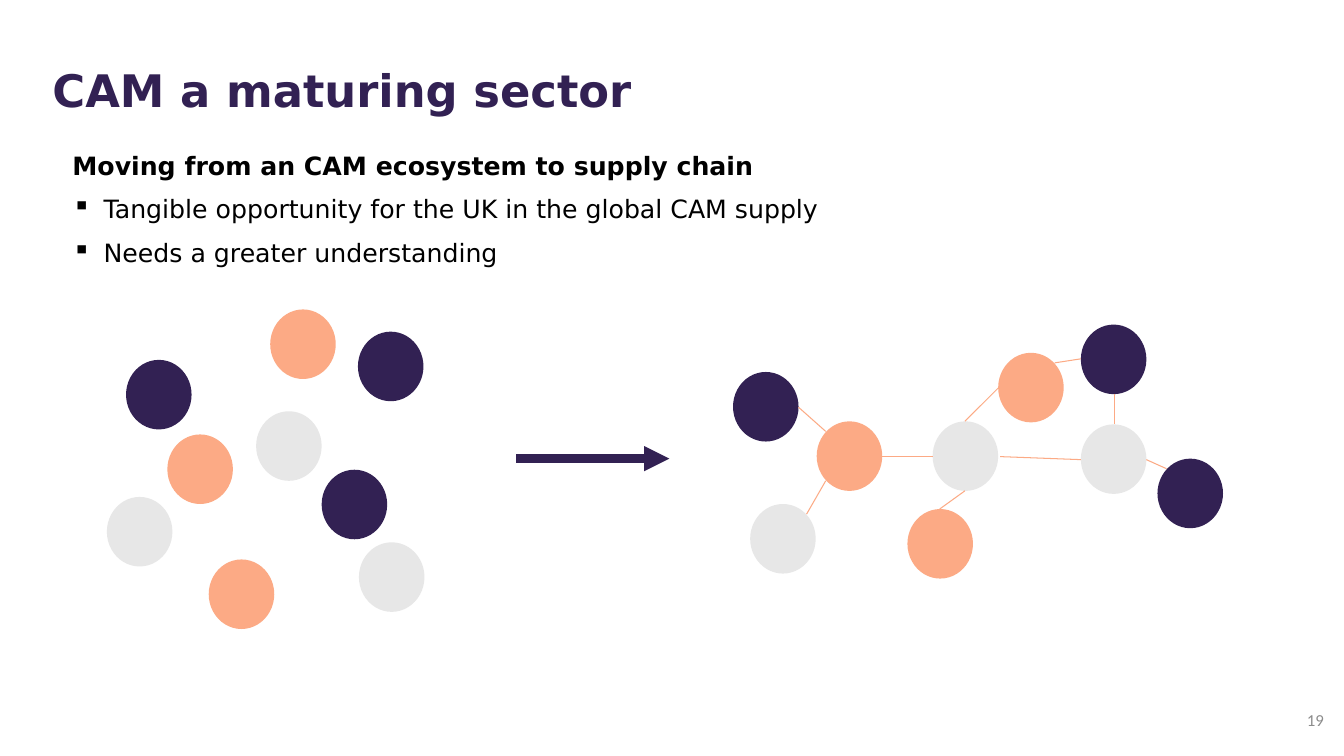
from dataclasses import dataclass

from lxml.etree import SubElement
from pptx import Presentation
from pptx.dml.color import RGBColor
from pptx.enum.shapes import MSO_CONNECTOR as Conn, MSO_SHAPE as Form
from pptx.enum.text import MSO_ANCHOR as Anchor, MSO_AUTO_SIZE as Fit, PP_ALIGN as Align
from pptx.oxml.ns import qn
from pptx.util import Inches, Pt

NAVY, PEACH, GREY = "322153", "FCAA85", "E7E7E7"
SANS = "DejaVu Sans"
WIDE, HIGH = 0.65, 0.69


@dataclass
class Dot:
    left: float
    top: float
    color: str


@dataclass
class Link:
    x1: float
    y1: float
    x2: float
    y2: float
    color: str = PEACH
    width: float = 0.75
    arrow: bool = False


# Loose ecosystem on the left, linked supply chain on the right
DOTS = [
    Dot(2.54, 4.08, GREY), Dot(3.55, 3.29, NAVY), Dot(2.68, 3.07, PEACH),
    Dot(1.06, 4.93, GREY), Dot(1.25, 3.57, NAVY), Dot(2.07, 5.55, PEACH),
    Dot(3.56, 5.38, GREY), Dot(3.19, 4.66, NAVY), Dot(1.66, 4.31, PEACH),
    Dot(9.25, 4.18, GREY), Dot(10.72, 3.22, NAVY), Dot(9.9, 3.5, PEACH),
    Dot(7.44, 5, GREY), Dot(7.27, 3.69, NAVY), Dot(9, 5.05, PEACH),
    Dot(10.72, 4.21, GREY), Dot(11.48, 4.55, NAVY), Dot(8.1, 4.18, PEACH),
]
LINKS = [
    Link(5.12, 4.55, 6.64, 4.55, NAVY, 6, True),
    Link(7.92, 4.04, 8.19, 4.28), Link(8, 5.1, 8.19, 4.77),
    Link(8.75, 4.53, 9.25, 4.53), Link(9.57, 4.18, 9.9, 3.85),
    Link(10.46, 3.6, 10.72, 3.56), Link(9.92, 4.53, 10.72, 4.56),
    Link(9.32, 5.05, 9.57, 4.87), Link(11.57, 4.65, 11.37, 4.56),
    Link(11.05, 3.91, 11.05, 4.21),
]
POINTS = [
    "Tangible opportunity for the UK in the global CAM supply",
    "Needs a greater understanding",
]


def rgb(code: str) -> RGBColor:
    return RGBColor.from_string(code)


def place(shape, left: float, top: float, width: float, height: float) -> None:
    shape.left, shape.top = Inches(left), Inches(top)
    shape.width, shape.height = Inches(width), Inches(height)


def add_run(para, text: str, size: float, color: str,
            bold: bool = False, face: str = SANS) -> None:
    run = para.add_run()
    run.text = text
    font = run.font
    font.name, font.size, font.bold = face, Pt(size), bold
    font.color.rgb = rgb(color)


def add_box(slide, left: float, top: float, width: float, height: float):
    box = slide.shapes.add_textbox(
        Inches(left), Inches(top), Inches(width), Inches(height))
    box.text_frame.word_wrap = True
    return box.text_frame


def add_line(para, text: str, bullet: bool) -> None:
    para.line_spacing, para.space_after = 1.07, Pt(8)
    if bullet:
        props = para._p.get_or_add_pPr()
        props.set("marL", str(Inches(0.31)))
        props.set("indent", str(Inches(-0.31)))
        SubElement(props, qn("a:buChar")).set("char", "▪")
    add_run(para, text, 18, "000000", bold=not bullet)


def draw_dot(slide, dot: Dot) -> None:
    oval = slide.shapes.add_shape(
        Form.OVAL, Inches(dot.left), Inches(dot.top), Inches(WIDE), Inches(HIGH))
    oval.shadow.inherit = False
    oval.fill.solid()
    oval.fill.fore_color.rgb = rgb(dot.color)
    oval.line.fill.background()


def draw_link(slide, link: Link) -> None:
    wire = slide.shapes.add_connector(
        Conn.STRAIGHT, Inches(link.x1), Inches(link.y1),
        Inches(link.x2), Inches(link.y2))
    wire.line.color.rgb = rgb(link.color)
    wire.line.width = Pt(link.width)
    if link.arrow:
        SubElement(wire.line._get_or_add_ln(), qn("a:tailEnd")).set("type", "triangle")
    SubElement(wire._element.spPr, qn("a:effectLst"))


def main() -> None:
    deck = Presentation()
    deck.slide_width, deck.slide_height = Inches(13.33), Inches(7.5)
    slide = deck.slides.add_slide(deck.slide_layouts[5])

    # Title
    title = slide.shapes.title
    place(title, 0.42, 0.57, 10.95, 0.93)
    frame = title.text_frame
    frame.auto_size, frame.vertical_anchor = Fit.NONE, Anchor.TOP
    frame.paragraphs[0].alignment = Align.LEFT
    add_run(frame.paragraphs[0], "CAM a maturing sector", 32, NAVY, True)

    # Page number
    frame = add_box(slide, 10.23, 6.94, 3, 0.4)
    frame.vertical_anchor = Anchor.MIDDLE
    frame.paragraphs[0].alignment = Align.RIGHT
    add_run(frame.paragraphs[0], "19", 12, "8C8C8C", face="Calibri")

    # Message and bullets
    frame = add_box(slide, 0.62, 1.42, 11.44, 1.28)
    add_line(frame.paragraphs[0], "Moving from an CAM ecosystem to supply chain", False)
    for point in POINTS:
        add_line(frame.add_paragraph(), point, True)

    # Diagram
    for dot in DOTS:
        draw_dot(slide, dot)
    for link in LINKS:
        draw_link(slide, link)

    deck.save("out.pptx")


if __name__ == "__main__":
    main()
